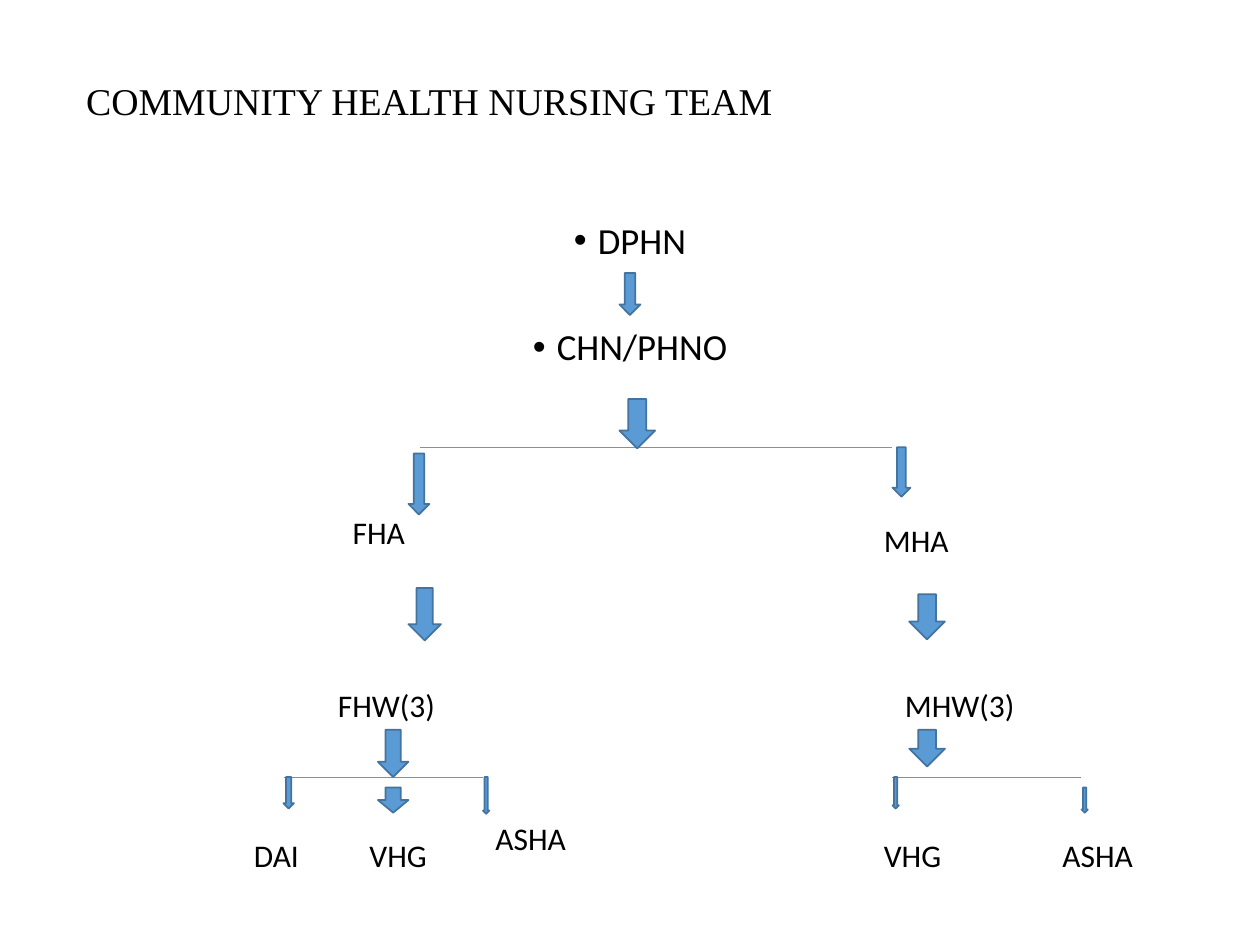
from lxml.etree import SubElement
from pptx import Presentation
from pptx.dml.color import RGBColor
from pptx.enum.shapes import MSO_CONNECTOR as Connector, MSO_SHAPE as Preset
from pptx.enum.text import MSO_ANCHOR as Anchor, MSO_AUTO_SIZE as AutoSize, PP_ALIGN as Align
from pptx.oxml.ns import qn
from pptx.util import Inches, Pt

WIDTH, HEIGHT = Inches(10), Inches(7.5)
COLUMNS, ROWS = 120, 90
LABEL_ROWS = 4.8
COLORS = {"text": "000000", "arrow": "5B9BD5", "outline": "43739E"}

TITLE = "COMMUNITY HEALTH NURSING TEAM"
LEADERS = [("DPHN", 7.5), ("CHN/PHNO", 38)]
ARROWS = [
    (59, 26, 2, 4), (59, 38, 3.4, 4.7),
    (38.9, 43.2, 2, 5.8), (85, 42.6, 1.7, 4.7),
    (38.9, 56, 3.1, 5), (86.6, 56.6, 3.4, 4.3),
    (36, 69.5, 2.9, 4.5), (86.6, 69.5, 3.4, 3.5),
    (27, 74, 1, 3), (36, 75, 2.9, 2.4), (46, 74, 0.6, 3.5),
    (85, 74, 0.6, 3), (103, 75, 0.6, 2.4),
]
BRANCHES = [(40, 85, 42.6), (27, 46, 74), (85, 103, 74)]
LABELS = [
    ("FHA", 32.4, 48.3, 15), ("MHA", 83, 49, 9),
    ("FHW(3)", 31, 64.7, 13), ("MHW(3)", 85, 64.7, 15),
    ("DAI", 23, 79, 8), ("VHG", 34, 79, 8), ("ASHA", 46, 77.4, 11),
    ("VHG", 83, 79, 9), ("ASHA", 100, 79, 10),
]


def column(count):
    return round(WIDTH * count / COLUMNS)


def row(count):
    return round(HEIGHT * count / ROWS)


def box(left, top, width, height):
    return column(left), row(top), column(width), row(height)


def color(name):
    return RGBColor.from_string(COLORS[name])


def apply(target, values):
    for name, value in values.items():
        setattr(target, name, value)


def write(paragraph, text, size, font="Calibri", **layout):
    run = paragraph.add_run()
    run.text = text
    apply(run.font, {"name": font, "size": Pt(size)})
    run.font.color.rgb = color("text")
    apply(paragraph, layout)


def place(shape, left, top, width, height):
    bounds = box(left, top, width, height)
    apply(shape, dict(zip(("left", "top", "width", "height"), bounds)))
    apply(shape.text_frame, {"word_wrap": True, "auto_size": AutoSize.NONE})


def fill_title(shape):
    place(shape, 7, 7.4, 105, 4.8)
    shape.text_frame.vertical_anchor = Anchor.MIDDLE
    write(shape.text_frame.paragraphs[0], TITLE, 21.6, "Times New Roman",
          alignment=Align.LEFT, line_spacing=0.9)


def fill_leaders(shape):
    place(shape, 7, 20.6, 106, 27.7)
    frame = shape.text_frame
    for index, (text, gap) in enumerate(LEADERS):
        paragraph = frame.add_paragraph() if index else frame.paragraphs[0]
        write(paragraph, text, 21, alignment=Align.CENTER,
              line_spacing=0.9, space_before=Pt(gap))
        properties = paragraph._p.get_or_add_pPr()
        properties.set("marL", str(Inches(0.19)))
        properties.set("indent", str(-Inches(0.19)))
        SubElement(properties, qn("a:buChar"), char="•")


def add_arrow(slide, *cells):
    arrow = slide.shapes.add_shape(Preset.DOWN_ARROW, *box(*cells))
    arrow.shadow.inherit = False
    arrow.fill.solid()
    arrow.fill.fore_color.rgb = color("arrow")
    arrow.line.color.rgb = color("outline")
    arrow.line.width = Pt(1)


def add_branch(slide, start, end, level):
    branch = slide.shapes.add_connector(
        Connector.STRAIGHT, column(start), row(level), column(end), row(level))
    branch.line.color.rgb = color("arrow")
    branch.line.width = Pt(0.5)
    SubElement(branch._element.spPr, qn("a:effectLst"))


def add_label(slide, text, left, top, width):
    frame = slide.shapes.add_textbox(*box(left, top, width, LABEL_ROWS)).text_frame
    apply(frame, {"word_wrap": True, "auto_size": AutoSize.SHAPE_TO_FIT_TEXT})
    write(frame.paragraphs[0], text, 18)


def main():
    presentation = Presentation()
    apply(presentation, {"slide_width": WIDTH, "slide_height": HEIGHT})
    slide = presentation.slides.add_slide(presentation.slide_layouts[1])
    fill_title(slide.shapes.title)
    fill_leaders(slide.placeholders[1])
    for add, items in ((add_branch, BRANCHES), (add_arrow, ARROWS), (add_label, LABELS)):
        for item in items:
            add(slide, *item)
    presentation.save("out.pptx")


if __name__ == "__main__":
    main()
